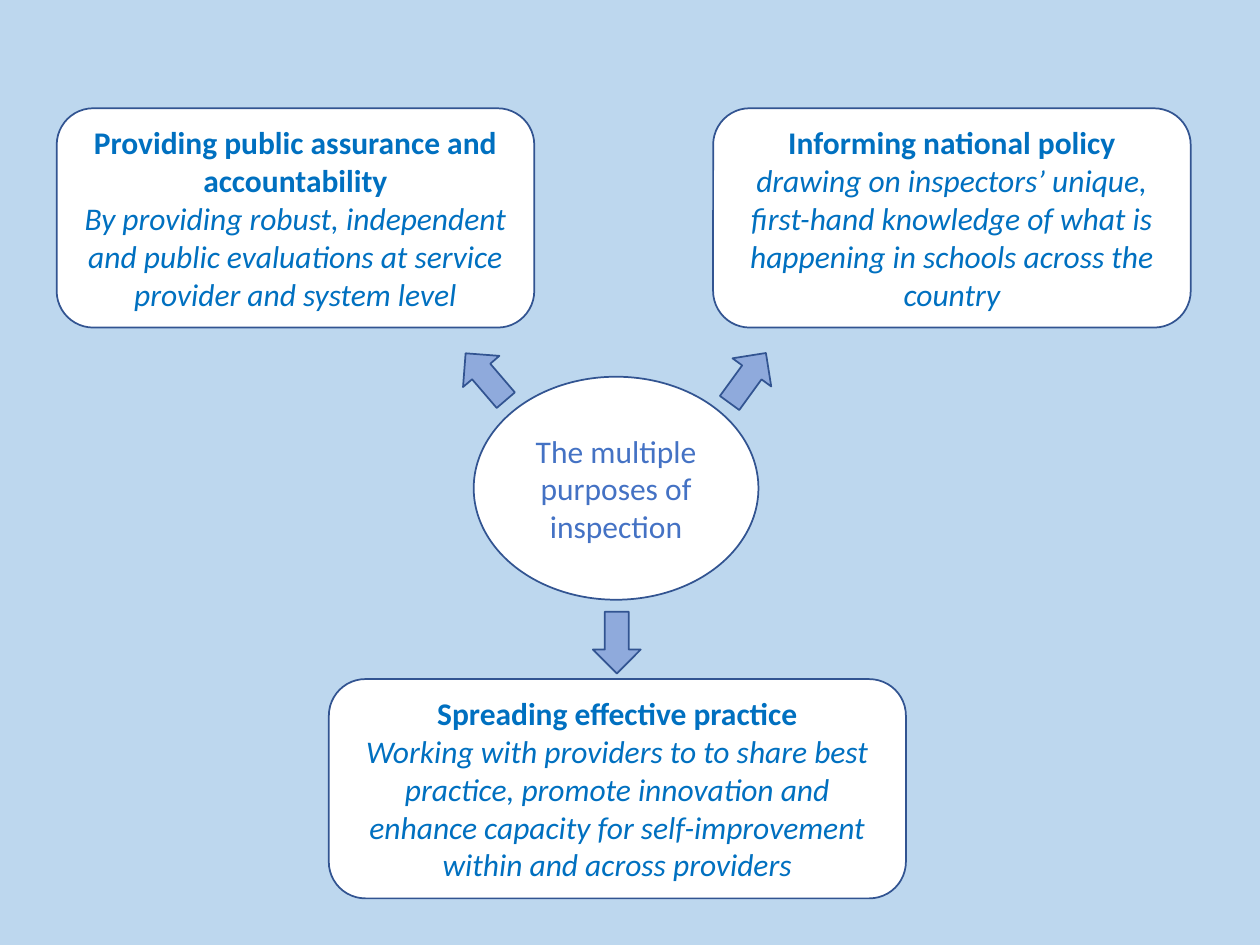
from pptx import Presentation
from pptx.dml.color import RGBColor
from pptx.enum.shapes import MSO_SHAPE
from pptx.enum.text import MSO_ANCHOR, PP_ALIGN
from pptx.util import Inches, Pt

# The slide is a grid of 100 columns by 75 rows
COLUMNS, ROWS = 100, 75
SKY, WHITE, OUTLINE = "BDD7EE", "FFFFFF", "325491"
PURPOSE_BLUE, HUB_BLUE, ARROW_BLUE = "0070C0", "4472C4", "8FAADC"

# Boxes are left, top, width, height in columns and rows
HUB_BOX = (37.6, 29.9, 22.6, 17.7)
PURPOSES = [
    ((56.6, 8.6, 37.9, 17.4), "Informing national policy",
     "drawing on inspectors’ unique, first-hand knowledge of what is "
     "happening in schools across the country"),
    ((4.5, 8.6, 37.9, 17.4), "Providing public assurance and accountability",
     "By providing robust, independent and public evaluations at service "
     "provider and system level"),
    ((26.1, 53.9, 45.8, 17.4), "Spreading effective practice",
     "Working with providers to to share best practice, promote innovation "
     "and enhance capacity for self-improvement within and across providers"),
]
ARROW_SIZE = (4.9, 3.8)
# Left, top and clockwise turn of each arrow away from the hub
ARROWS = [(46.5, 49.1, 90), (36.1, 28, 229.4), (56.9, 28.1, 306)]


def rgb(hex_code):
    return RGBColor.from_string(hex_code)


def add_outlined(slide, kind, box, fill):
    left, top, width, height = box
    column, row = Inches(10) / COLUMNS, Inches(7.5) / ROWS
    outlined = slide.shapes.add_shape(
        kind, round(left * column), round(top * row),
        round(width * column), round(height * row))
    outlined.shadow.inherit = False
    outlined.fill.solid()
    outlined.fill.fore_color.rgb = rgb(fill)
    outlined.line.color.rgb = rgb(OUTLINE)
    outlined.line.width = Pt(1)
    return outlined


def write_lines(holder, lines, color):
    """Write one centred paragraph for each (text, bold, italic)."""
    frame = holder.text_frame
    frame.word_wrap = True
    frame.vertical_anchor = MSO_ANCHOR.MIDDLE
    for index, (text, bold, italic) in enumerate(lines):
        paragraph = frame.add_paragraph() if index else frame.paragraphs[0]
        paragraph.alignment = PP_ALIGN.CENTER
        run = paragraph.add_run()
        run.text = text
        run.font.name = "Calibri"
        run.font.size = Pt(18)
        run.font.bold = bold
        run.font.italic = italic
        run.font.color.rgb = rgb(color)


def add_hub(slide, box):
    hub = add_outlined(slide, MSO_SHAPE.OVAL, box, WHITE)
    write_lines(hub, [("The multiple purposes of inspection", False, False)],
                HUB_BLUE)


def add_purpose(slide, box, heading, detail):
    purpose = add_outlined(slide, MSO_SHAPE.ROUNDED_RECTANGLE, box, WHITE)
    write_lines(purpose, [(heading, True, False), (detail, False, True)],
                PURPOSE_BLUE)


def add_arrow(slide, box, turn):
    arrow = add_outlined(slide, MSO_SHAPE.RIGHT_ARROW, box, ARROW_BLUE)
    arrow.rotation = turn


def main():
    deck = Presentation()
    deck.slide_width, deck.slide_height = Inches(10), Inches(7.5)
    slide = deck.slides.add_slide(deck.slide_layouts[6])
    slide.background.fill.solid()
    slide.background.fill.fore_color.rgb = rgb(SKY)

    # Central hub, the purposes around it, and the arrows between
    add_hub(slide, HUB_BOX)
    for box, heading, detail in PURPOSES:
        add_purpose(slide, box, heading, detail)
    for left, top, turn in ARROWS:
        add_arrow(slide, (left, top, *ARROW_SIZE), turn)

    deck.save("out.pptx")


if __name__ == "__main__":
    main()
